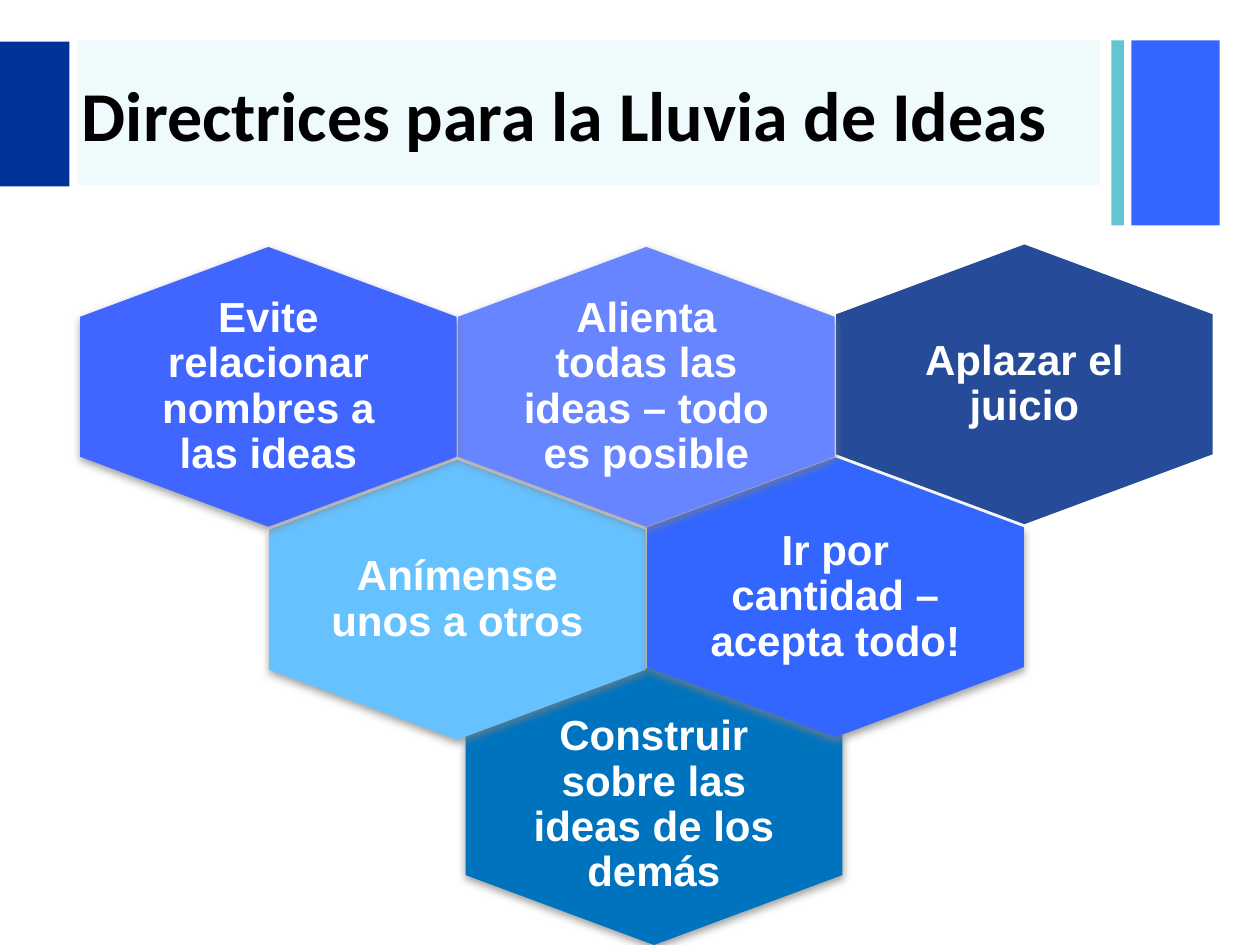
from lxml import etree
from pptx import Presentation
from pptx import util as u
from pptx.dml.color import RGBColor
from pptx.enum import shapes, text
from pptx.oxml import parse_xml
from pptx.oxml.ns import nsdecls, qn

WIDTH, HEIGHT = 10, 7.5
HEX_W, HEX_H = 2.99, 2.22
TEXT_W, TEXT_H = 2.06, 1.53
FIRST_X, FIRST_Y = 2.13, 3.07  # centre of the top left hexagon
HALF_COL, ROW = 1.5, 1.67

WHITE = RGBColor(0xFF, 0xFF, 0xFF)
BLACK = RGBColor(0x00, 0x00, 0x00)
NAVY = RGBColor(0x00, 0x33, 0x99)
BLUE = RGBColor(0x33, 0x66, 0xFF)
TEAL = RGBColor(0x65, 0xC4, 0xD2)
AQUA = RGBColor(0x14, 0xC5, 0xD0)
DARK_BLUE = RGBColor(0x26, 0x4C, 0x99)
OCEAN = RGBColor(0x00, 0x73, 0xBF)
SKY = RGBColor(0x66, 0xC2, 0xFF)
PERIWINKLE = RGBColor(0x66, 0x85, 0xFF)
ROYAL = RGBColor(0x40, 0x66, 0xFF)

# left, top, width, height, colour, opacity in percent
BARS = [
    (8.98, 0.32, 0.70, 1.47, BLUE, 100),
    (8.82, 0.32, 0.10, 1.47, TEAL, 100),
    (0.61, 0.32, 8.12, 1.15, AQUA, 7),
    (0, 0.33, 0.55, 1.15, NAVY, 100),
]

# half column, row, nudge right, nudge down, colour, shadow, wording; back to front
GUIDELINES = [
    (4, 0, 0, -0.02, DARK_BLUE, False, "Aplazar el juicio"),
    (2, 2, 0.06, -0.02, OCEAN, True, "Construir sobre las ideas de los demás"),
    (1, 1, 0, 0.02, SKY, True, "Anímense unos a otros"),
    (3, 1, 0, 0, BLUE, True, "Ir por cantidad – acepta todo!"),
    (2, 0, 0, 0, PERIWINKLE, True, "Alienta todas las ideas – todo es posible"),
    (0, 0, 0, 0, ROYAL, True, "Evite relacionar nombres a las ideas"),
]


def centred_box(x, y, w, h):
    return [u.Inches(v) for v in (x - w / 2, y - h / 2, w, h)]


def add_run(p, wording, font, size, colour):
    r = p.add_run()
    r.text = wording
    r.font.name, r.font.size, r.font.bold = font, u.Pt(size), True
    r.font.color.rgb = colour


def add_filled(parent, preset, box, colour):
    sp = parent.add_shape(preset, *box)
    sp.shadow.inherit = False
    sp.fill.solid()
    sp.fill.fore_color.rgb = colour
    sp.line.fill.background()
    return sp


def add_bar(s, left, top, width, height, colour, opacity):
    box = [u.Inches(v) for v in (left, top, width, height)]
    sp = add_filled(s.shapes, shapes.MSO_SHAPE.RECTANGLE, box, colour)
    if opacity < 100:
        clr = sp.element.spPr.find(qn("a:solidFill"))[0]
        etree.SubElement(clr, qn("a:alpha")).set("val", str(opacity * 1000))


def add_shadow(sp):
    """Fill the empty effect list with a soft shadow below the shape."""
    sp.element.spPr.find(qn("a:effectLst")).append(parse_xml(
        f'<a:outerShdw {nsdecls("a")} blurRad="{u.Pt(5)}" dist="{u.Pt(2)}" '
        'dir="5400000" rotWithShape="0"><a:srgbClr val="808080">'
        '<a:alpha val="75000"/></a:srgbClr></a:outerShdw>'))


def add_guideline(s, half_col, row, dx, dy, colour, shadow, wording):
    """Group an upright hexagon with its level text."""
    x = FIRST_X + half_col * HALF_COL + dx
    y = FIRST_Y + row * ROW + dy
    group = s.shapes.add_group_shape().shapes

    sp = add_filled(group, shapes.MSO_SHAPE.HEXAGON,
                    centred_box(x, y, HEX_H, HEX_W), colour)
    sp.rotation = 90
    if shadow:
        add_shadow(sp)

    tf = group.add_textbox(*centred_box(x, y, TEXT_W, TEXT_H)).text_frame
    tf.word_wrap = True
    tf.vertical_anchor = text.MSO_ANCHOR.MIDDLE
    tf.margin_left = tf.margin_right = u.Inches(0.03)
    tf.margin_top = tf.margin_bottom = u.Inches(0.03)
    p = tf.paragraphs[0]
    p.alignment = text.PP_ALIGN.CENTER
    p.line_spacing = 0.9
    add_run(p, wording, "Arial", 24, WHITE)


def set_title(s, wording):
    """Place the title in front of the bars."""
    title = s.shapes.title
    title.element.getparent().append(title.element)
    title.left, title.top = u.Inches(0.55), u.Inches(0.34)
    title.width, title.height = u.Inches(8.26), u.Inches(1.12)
    tf = title.text_frame
    tf.word_wrap = True
    tf.auto_size = text.MSO_AUTO_SIZE.NONE
    tf.vertical_anchor = text.MSO_ANCHOR.MIDDLE
    p = tf.paragraphs[0]
    p.alignment = text.PP_ALIGN.LEFT
    add_run(p, wording, "Calibri", 40, BLACK)


def main():
    prs = Presentation()
    prs.slide_width, prs.slide_height = u.Inches(WIDTH), u.Inches(HEIGHT)
    s = prs.slides.add_slide(prs.slide_layouts[5])
    for bar in BARS:
        add_bar(s, *bar)
    set_title(s, "Directrices para la Lluvia de Ideas")
    for guideline in GUIDELINES:
        add_guideline(s, *guideline)
    prs.save("out.pptx")


if __name__ == "__main__":
    main()
